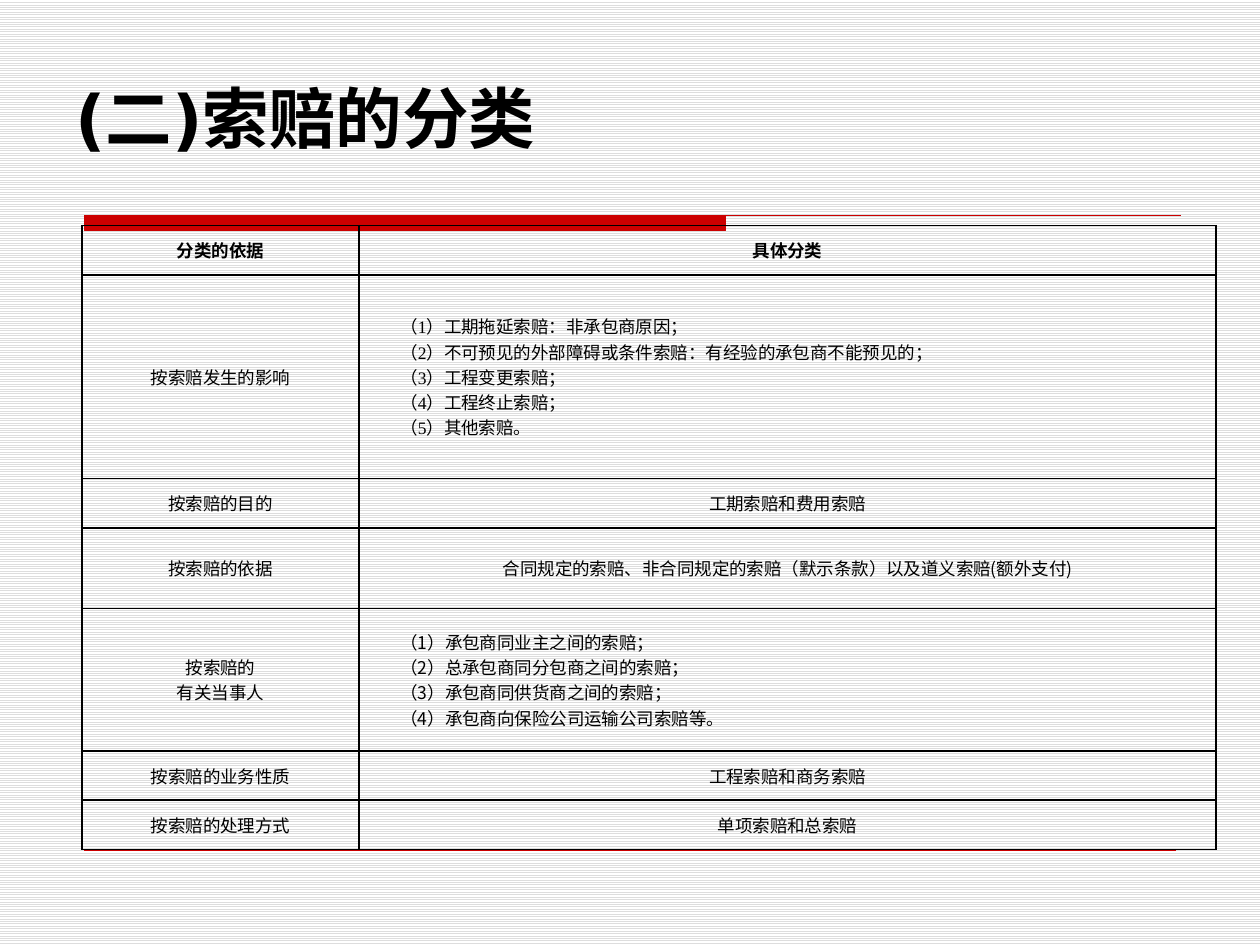
from dataclasses import dataclass
from lxml import etree
from pptx import Presentation
from pptx.dml.color import RGBColor
from pptx.enum.dml import MSO_PATTERN
from pptx.enum.shapes import MSO_CONNECTOR
from pptx.enum.text import MSO_ANCHOR, PP_ALIGN
from pptx.oxml.ns import qn
from pptx.util import Cm, Pt

MIDDLE = MSO_ANCHOR.MIDDLE
LEFT, CENTER = PP_ALIGN.LEFT, PP_ALIGN.CENTER
STRAIGHT = MSO_CONNECTOR.STRAIGHT
STRIPES = MSO_PATTERN.LIGHT_HORIZONTAL


@dataclass(frozen=True)
class Theme:
    black: RGBColor = RGBColor(0, 0, 0)
    red: RGBColor = RGBColor(0xCC, 0, 0)
    white: RGBColor = RGBColor(0xFF, 0xFF, 0xFF)
    stripe: RGBColor = RGBColor(0xDD, 0xDD, 0xDD)
    title: Pt = Pt(38)
    body: Pt = Pt(10)
    title_font: str = "DejaVu Sans"
    sans: str = "Noto Sans CJK SC"
    serif: str = "Times New Roman"


T = Theme()


def add_run(p, text, size, font, bold=False):
    r = p.add_run()
    r.text = text
    r.font.size, r.font.bold, r.font.name = size, bold, font
    r.font.color.rgb = T.black
    ea = etree.SubElement(r.font._element, qn("a:ea"))
    ea.set("typeface", T.sans)


def add_borders(cell):
    tcPr = cell._tc.get_or_add_tcPr()
    for i, side in enumerate(("lnL", "lnR", "lnT", "lnB")):
        ln = etree.Element(qn(f"a:{side}"), w=str(Pt(1)))
        fill = etree.SubElement(ln, qn("a:solidFill"))
        etree.SubElement(fill, qn("a:srgbClr"), val=str(T.black))
        tcPr.insert(i, ln)


prs = Presentation()
prs.slide_width, prs.slide_height = Cm(25.4), Cm(19.05)
s = prs.slides.add_slide(prs.slide_layouts[6])

bg = s.background.fill
bg.patterned()
bg.pattern = STRIPES
bg.fore_color.rgb, bg.back_color.rgb = T.stripe, T.white

left, top, right = Cm(1.7), Cm(4.34), Cm(23.8)
bar_right, bar_bottom = Cm(14.63), Cm(4.65)
fb = s.shapes.build_freeform(left, top)
fb.add_line_segments([(bar_right, top), (bar_right, bar_bottom), (left, bar_bottom)])
fb.move_to(left, top)
fb.add_line_segments([(right, top)], close=False)
bar = fb.convert_to_shape()
bar.shadow.inherit = False
bar.fill.solid()
bar.fill.fore_color.rgb = T.red
bar.line.color.rgb, bar.line.width = T.red, Pt(0.75)

rule = s.shapes.add_connector(STRAIGHT, left, Cm(17.15), Cm(23.7), Cm(17.15))
rule.line.color.rgb, rule.line.width = T.red, Pt(0.25)
etree.SubElement(rule._element.spPr, qn("a:effectLst"))

title = s.shapes.add_textbox(Cm(1.27), Cm(0.76), Cm(22.86), Cm(3.18))
tf = title.text_frame
tf.word_wrap = True
tf.vertical_anchor = MIDDLE
add_run(tf.paragraphs[0], "(二)索赔的分类", T.title, T.title_font, True)

rows = [
    (0.99, ["分类的依据"], T.sans, ["具体分类"], T.sans),
    (4.11, ["按索赔发生的影响"], T.serif, [
        "（1）工期拖延索赔：非承包商原因；",
        "（2）不可预见的外部障碍或条件索赔：有经验的承包商不能预见的；",
        "（3）工程变更索赔；",
        "（4）工程终止索赔；",
        "（5）其他索赔。"], T.serif),
    (0.99, ["按索赔的目的"], T.sans, ["工期索赔和费用索赔"], T.sans),
    (1.63, ["按索赔的依据"], T.sans,
     ["合同规定的索赔、非合同规定的索赔（默示条款）以及道义索赔(额外支付)"], T.sans),
    (2.87, ["按索赔的", "有关当事人"], T.sans, [
        "（1）承包商同业主之间的索赔；",
        "（2）总承包商同分包商之间的索赔；",
        "（3）承包商同供货商之间的索赔；",
        "（4）承包商向保险公司运输公司索赔等。"], T.sans),
    (0.99, ["按索赔的业务性质"], T.sans, ["工程索赔和商务索赔"], T.sans),
    (0.99, ["按索赔的处理方式"], T.sans, ["单项索赔和总索赔"], T.serif),
]
height = Cm(sum(row[0] for row in rows))
table = s.shapes.add_table(len(rows), 2, Cm(1.65), Cm(4.55), Cm(22.86), height).table
table.first_row = table.horz_banding = False
table.columns[0].width, table.columns[1].width = Cm(5.59), Cm(17.27)

for i, (row_height, basis, basis_font, kinds, kinds_font) in enumerate(rows):
    table.rows[i].height = Cm(row_height)
    for j, (lines, font) in enumerate([(basis, basis_font), (kinds, kinds_font)]):
        cell = table.cell(i, j)
        cell.fill.background()
        cell.vertical_anchor = MIDDLE
        add_borders(cell)
        tf = cell.text_frame
        numbered = lines[0].startswith("（")
        for n, line in enumerate(lines):
            p = tf.add_paragraph() if n else tf.paragraphs[0]
            p.alignment = LEFT if numbered else CENTER
            if numbered:
                pPr = p._p.get_or_add_pPr()
                pPr.set("marL", "0")
                pPr.set("indent", str(Cm(0.58)))
            add_run(p, line, T.body, font, i == 0)

prs.save("out.pptx")
